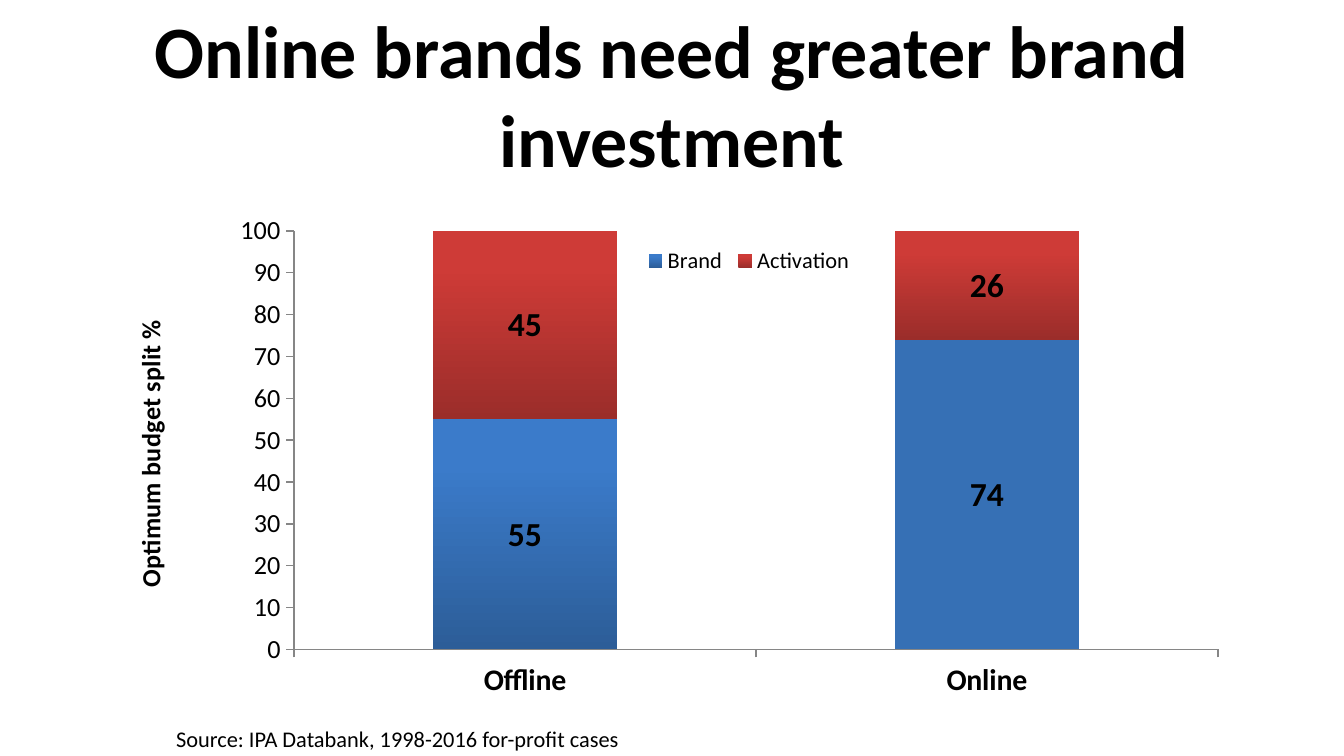
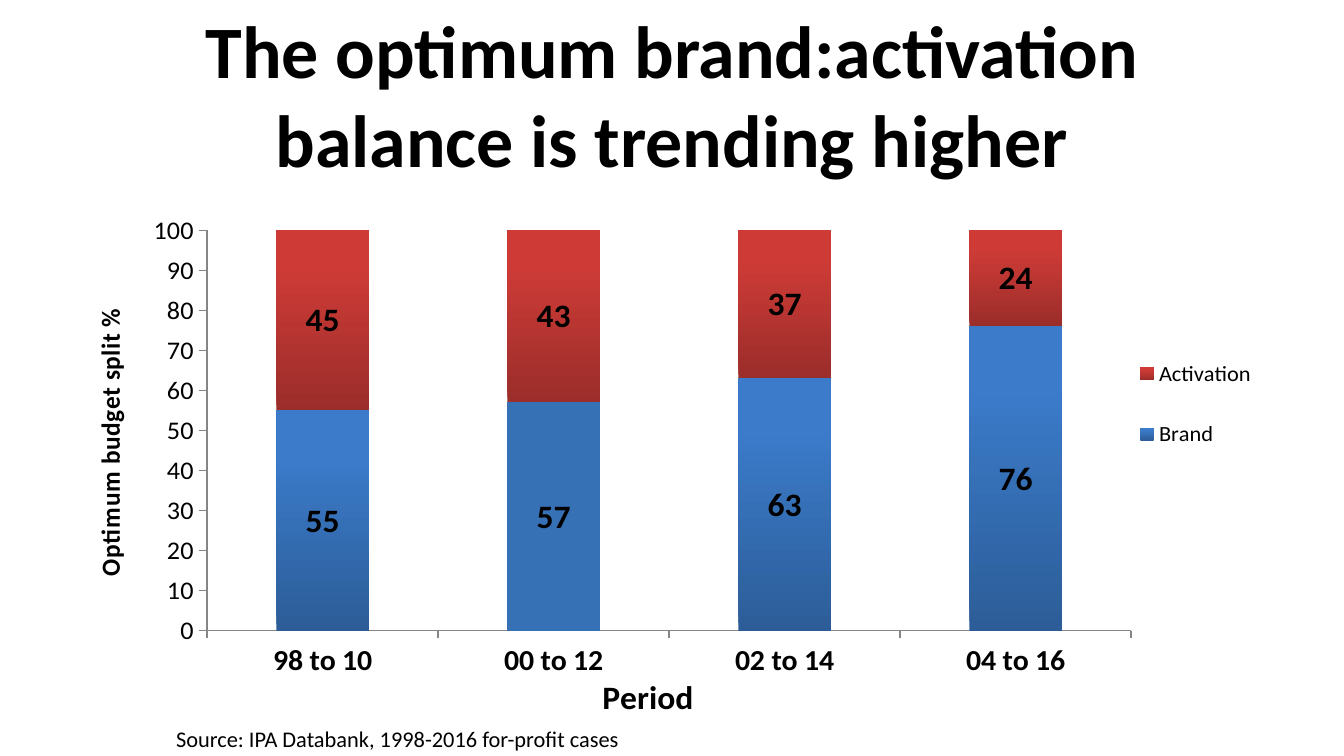
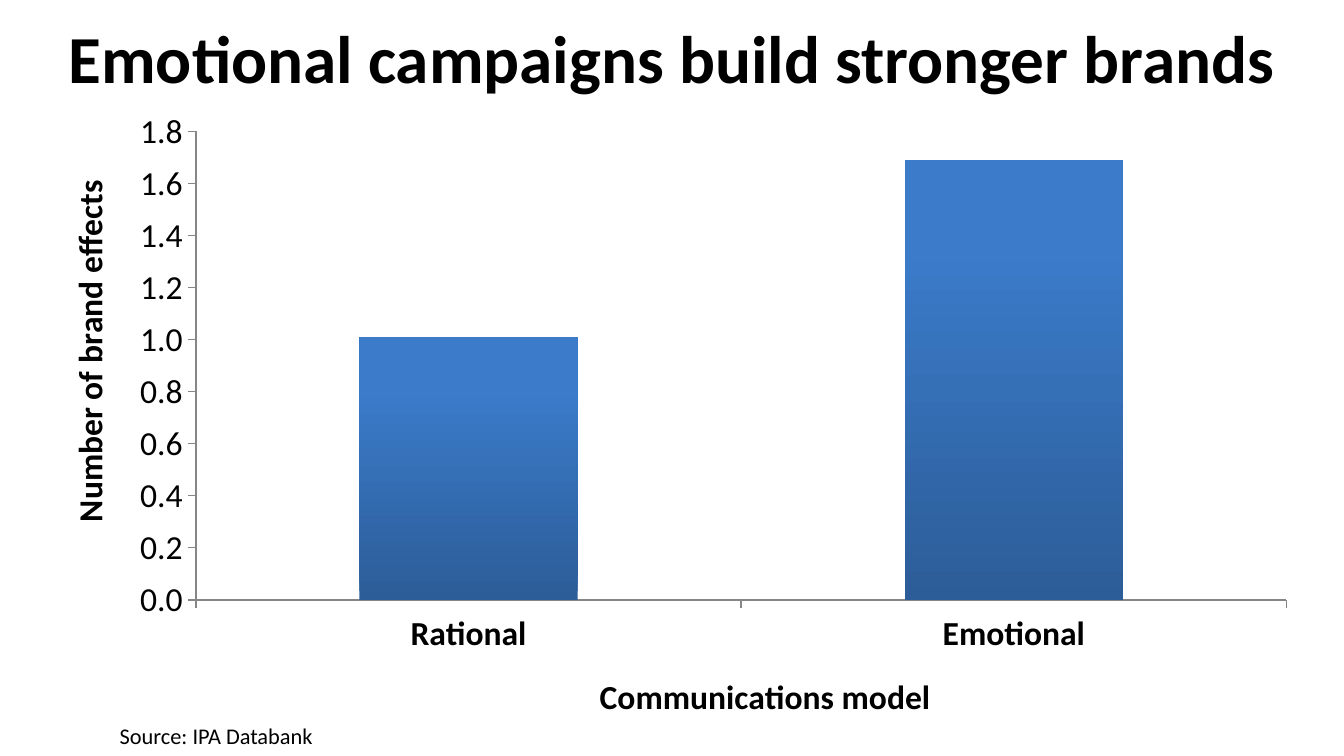
from lxml.etree import SubElement
from pptx import Presentation
from pptx.chart.data import CategoryChartData
from pptx.dml.color import RGBColor
from pptx.enum.chart import (XL_CHART_TYPE, XL_LEGEND_POSITION,
                             XL_TICK_LABEL_POSITION, XL_TICK_MARK)
from pptx.enum.text import MSO_ANCHOR, MSO_AUTO_SIZE, PP_ALIGN
from pptx.oxml.ns import qn
from pptx.util import Pt

BLACK = RGBColor(0x00, 0x00, 0x00)
GREY = RGBColor(0x86, 0x86, 0x86)
BLUE = RGBColor(0x36, 0x70, 0xB5)
# Dark foot and light head of each column
SHADES = [
    (RGBColor(0x2C, 0x5D, 0x98), RGBColor(0x3B, 0x7B, 0xCA)),
    (RGBColor(0x9B, 0x2D, 0x2A), RGBColor(0xCE, 0x3B, 0x37)),
]
FONT = "Calibri"
PX = 9525  # EMU in one px
SPLIT = "Optimum budget split %"
SOURCE = "Source: IPA Databank, 1998-2016 for-profit cases"


class Deck:
    def __init__(self, width, height):
        self.prs = Presentation()
        self.prs.slide_width = width * PX
        self.prs.slide_height = height * PX
        self.slide = None

    def font(self, font, size, bold=False):
        font.name, font.size, font.bold = FONT, Pt(size), bold
        font.color.rgb = BLACK

    # Title placeholder
    def title(self, text, box, size):
        self.slide = self.prs.slides.add_slide(self.prs.slide_layouts[5])
        shape = self.slide.shapes.title
        shape.left, shape.top, shape.width, shape.height = [n * PX for n in box]
        frame = shape.text_frame
        frame.text = text
        frame.auto_size = MSO_AUTO_SIZE.NONE
        frame.vertical_anchor = MSO_ANCHOR.MIDDLE
        line = frame.paragraphs[0]
        line.alignment = PP_ALIGN.CENTER
        self.font(line.font, size, True)

    # Source line at the foot
    def source(self, text, box, align=PP_ALIGN.CENTER, wrap=True):
        frame = self.slide.shapes.add_textbox(*[n * PX for n in box]).text_frame
        frame.text = text
        frame.word_wrap = wrap
        frame.auto_size = MSO_AUTO_SIZE.SHAPE_TO_FIT_TEXT
        line = frame.paragraphs[0]
        line.alignment = align
        self.font(line.font, 12)

    # Column chart; every series shares the same style
    def chart(self, kind, box, plot, cats, rows):
        data = CategoryChartData()
        data.categories = cats
        for name, vals in rows:
            data.add_series(name, vals)
        self.box = box
        self.graph = self.slide.shapes.add_chart(
            kind, *[n * PX for n in box], data).chart
        self.graph.has_title = False
        self.graph.has_legend = False
        self.font(self.graph.font, 18)
        area = self.graph._chartSpace.find(".//" + qn("c:plotArea"))
        self.place(area, plot, inner=True)
        bars = self.graph.plots[0]
        bars.gap_width = 150
        bars.vary_by_categories = False
        for series, (dark, light) in zip(bars.series, SHADES):
            series.invert_if_negative = False
            fill = series.format.fill
            fill.gradient()
            fill.gradient_angle = 90
            foot, head = fill.gradient_stops
            foot.color.rgb, foot.position = dark, 0
            head.color.rgb, head.position = light, 0.8

    # Fixed place inside the chart, from px on the slide
    def place(self, node, spot, inner=False):
        for old in node.findall(qn("c:layout")):
            node.remove(old)
        layout = node.makeelement(qn("c:layout"), {})
        first = [n for n in node if n.tag in (qn("c:tx"), qn("c:legendPos"))]
        node.insert(len(first), layout)
        manual = SubElement(layout, qn("c:manualLayout"))
        if inner:
            SubElement(manual, qn("c:layoutTarget"), val="inner")
        for key in "xy":
            SubElement(manual, qn(f"c:{key}Mode"), val="edge")
        left, top, width, height = self.box
        starts, spans = (left, top, 0, 0), (width, height) * 2
        for key, val, start, span in zip("xywh", spot, starts, spans):
            SubElement(manual, qn(f"c:{key}"), val=f"{(val - start) / span:.4f}")

    def axis(self, axis, size, bold=False):
        axis.has_major_gridlines = False
        axis.major_tick_mark = XL_TICK_MARK.OUTSIDE
        axis.minor_tick_mark = XL_TICK_MARK.NONE
        axis.tick_label_position = XL_TICK_LABEL_POSITION.LOW
        axis.format.line.color.rgb = GREY
        axis.format.line.width = Pt(0.75)
        self.font(axis.tick_labels.font, size, bold)

    def scale(self, top, step, form, size):
        axis = self.graph.value_axis
        self.axis(axis, size)
        axis.minimum_scale, axis.maximum_scale = 0, top
        axis.major_unit = step
        axis.tick_labels.number_format = form
        axis.tick_labels.number_format_is_linked = False

    def name(self, axis, text, spot, size=18, turn=0):
        title = axis.axis_title
        title.text_frame.text = text
        title.text_frame._txBody.bodyPr.set("rot", str(turn * 60000))
        self.font(title.text_frame.paragraphs[0].font, size, True)
        self.place(title._element, spot)

    def legend(self, side, spot):
        self.graph.has_legend = True
        legend = self.graph.legend
        legend.position = side
        legend.include_in_layout = False
        self.font(legend.font, 12)
        self.place(legend._element, spot)

    # Brand and activation shares, stacked to 100
    def split(self, title, cats, brand, plot, label, side, key):
        self.title(title, (48, 22, 864, 90), 39.6)
        rows = [("Brand", brand), ("Activation", [100 - n for n in brand])]
        self.chart(XL_CHART_TYPE.COLUMN_STACKED, (41, 149, 864, 371),
                   plot, cats, rows)
        bars = self.graph.plots[0]
        bars.overlap = 100
        for series in bars.series:
            labels = series.data_labels
            labels.show_value = True
            labels.number_format = "0"
            labels.number_format_is_linked = False
            self.font(labels.font, 18, True)
        point = bars.series[0].points[1].format.fill
        point.solid()
        point.fore_color.rgb = BLUE
        self.axis(self.graph.category_axis, 16, True)
        self.scale(100, 10, "0", 14)
        self.name(self.graph.value_axis, SPLIT, label, 14, -90)
        self.legend(side, key)
        self.source(SOURCE, (80, 513, 408, 29))


def main():
    deck = Deck(960, 540)

    # Slide 1: offline and online
    deck.split("Online brands need greater brand investment",
               ["Offline", "Online"], [55, 74], (210, 165, 660, 299),
               (91, 225), XL_LEGEND_POSITION.TOP, (457, 172, 156, 29))

    # Slide 2: trend by period
    deck.split("The optimum brand:activation balance is trending higher",
               ["98 to 10", "00 to 12", "02 to 14", "04 to 16"],
               [55, 57, 63, 76], (148, 165, 660, 295),
               (62, 225), XL_LEGEND_POSITION.RIGHT, (805, 236, 98, 114))
    deck.name(deck.graph.category_axis, "Period", (426, 488))

    # Slide 3: rational and emotional
    deck.title("Emotional campaigns build stronger brands", (0, 0, 960, 81), 36)
    deck.chart(XL_CHART_TYPE.COLUMN_CLUSTERED, (0, 74, 960, 446),
               (140, 94, 779, 335), ["Rational", "Emotional"],
               [("Series 1", [1.01, 1.69])])
    deck.axis(deck.graph.category_axis, 18, True)
    deck.scale(1.8, 0.2, "0.0", 18)
    deck.name(deck.graph.value_axis, "Number of brand effects", (43, 125), turn=-90)
    deck.name(deck.graph.category_axis, "Communications model", (424, 477))
    deck.source("Source: IPA Databank", (76, 511, 160, 29), PP_ALIGN.LEFT, False)

    deck.prs.save("out.pptx")


if __name__ == "__main__":
    main()
